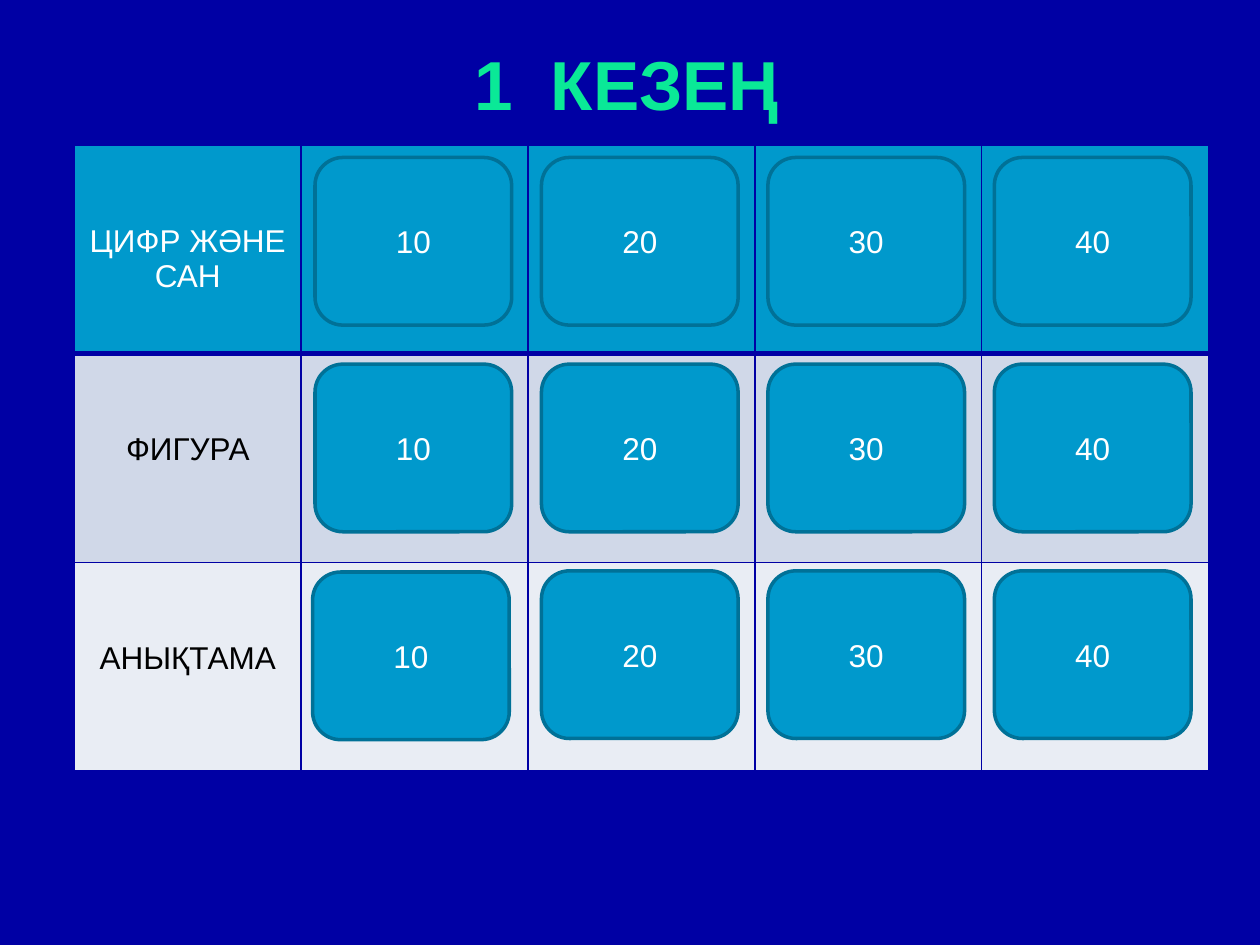
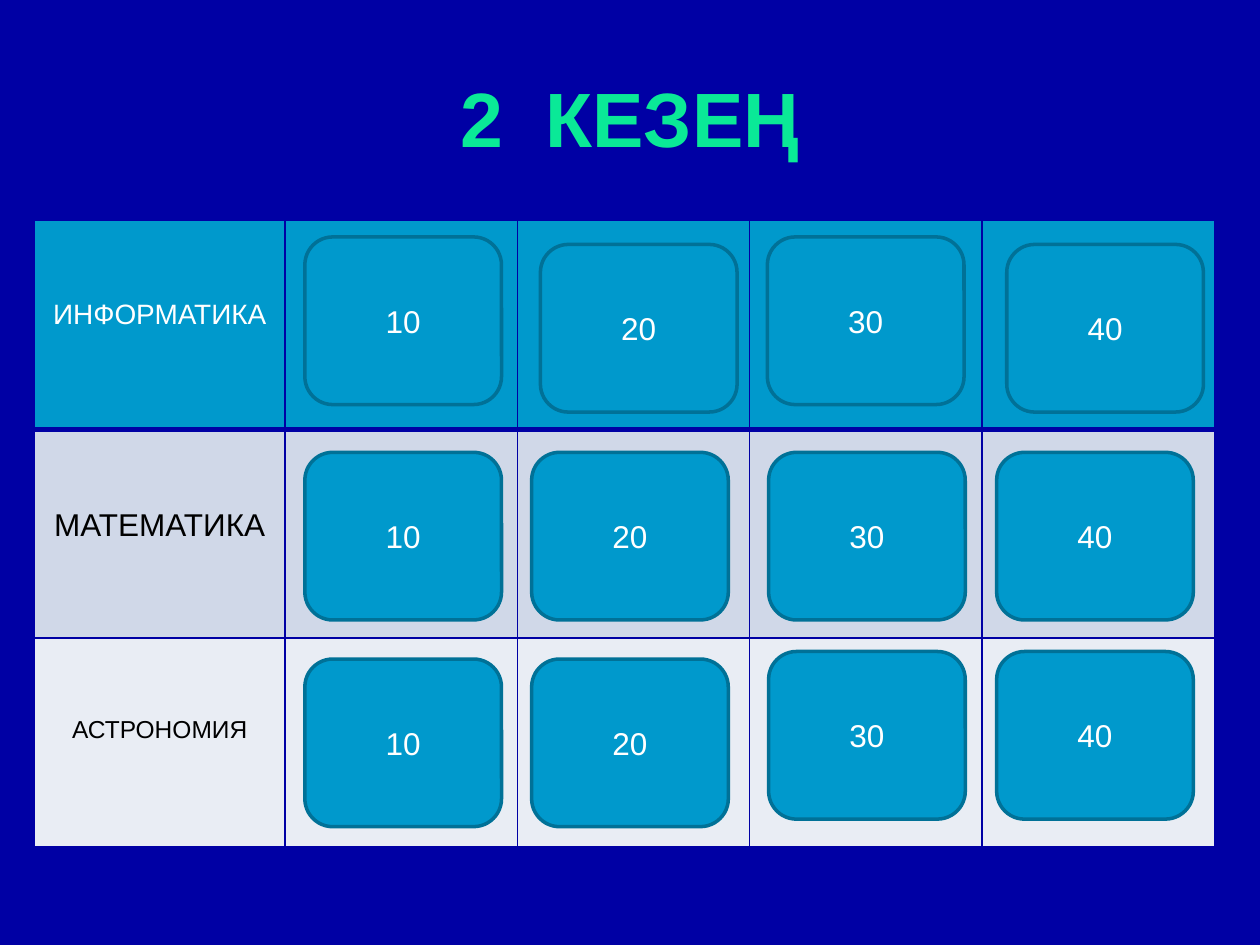
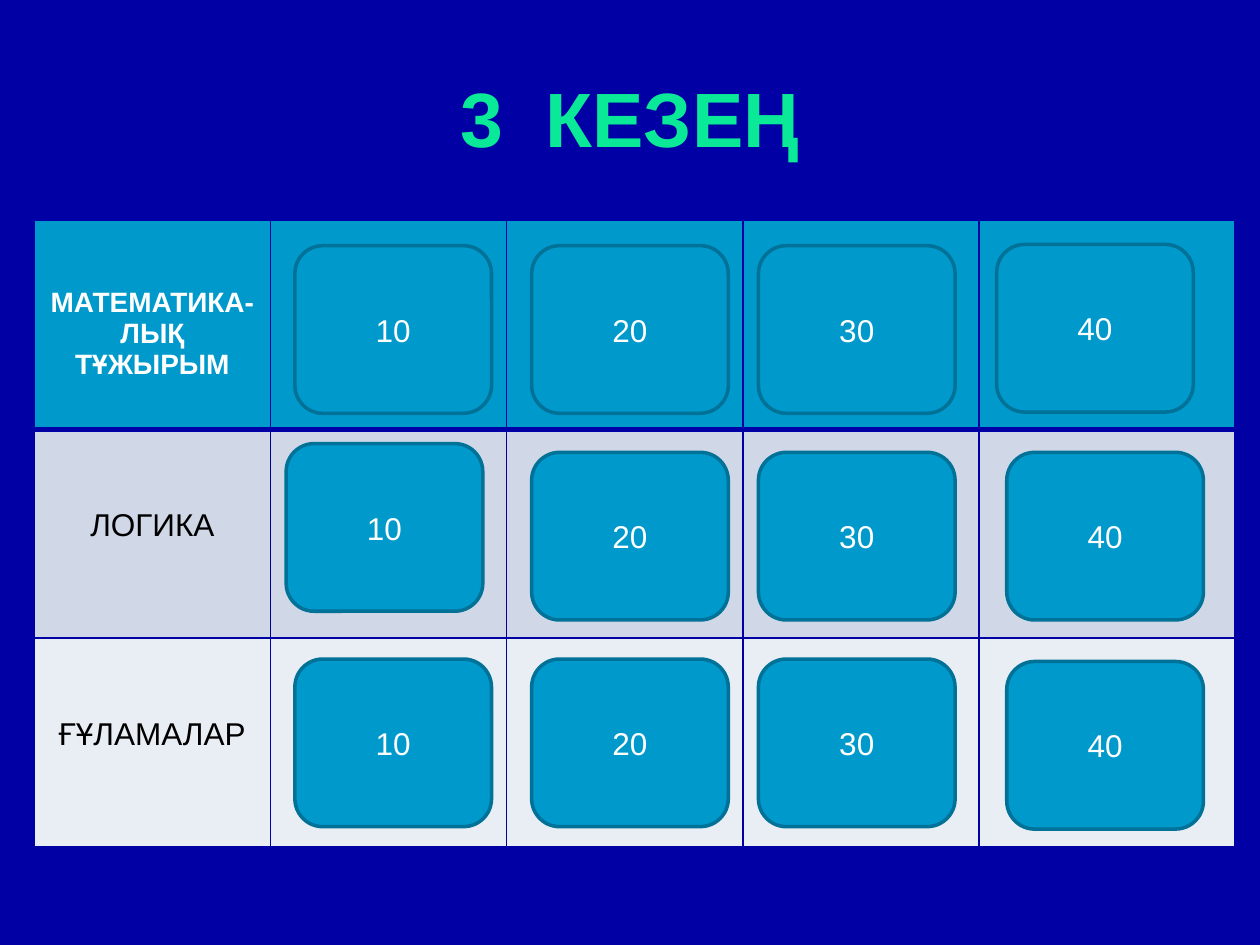
import pptx
import pptx.util
import pptx.dml.color
import pptx.enum.shapes
import pptx.enum.text
import pptx.oxml
import pptx.oxml.ns

Pt = pptx.util.Pt
FONT = "Arial"
NAVY, BLUE, EDGE, MINT = "0000A4", "0099CC", "007197", "0AE997"
WHITE, BLACK = "FFFFFF", "000000"
ROW_FILLS = [BLUE, "D0D8E8", "E9EDF4"]
ROW_INKS = [WHITE, BLACK, BLACK]
POINTS = ["10", "20", "30", "40"]
ROW_H = 119.3
BUTTON_W, BUTTON_H = 112.4, 95.8

STAGES = [
    {
        "title": "1  КЕЗЕҢ", "title_size": 39.6, "title_box": (33.8, 22.3, 648.7, 50.4),
        "table_at": (42.5, 82.8), "cols": [129.6] * 5,
        "topics": [("ЦИФР ЖӘНЕ САН", 18, False, 45), ("ФИГУРА", 18, False, 45),
                   ("АНЫҚТАМА", 18, False, 45)],
        "button_xs": [180, 309.4, 438.8, 568.2], "button_ys": [90, 208.1, 326.2],
        "nudges": {(2, 0): (-1.4, 0.7)},
    },
    {
        "title": "2  КЕЗЕҢ", "title_size": 44, "title_box": (36, 21.6, 648, 90),
        "table_at": (19.6, 126), "cols": [143.4, 132.7, 132.7, 132.7, 133],
        "topics": [("ИНФОРМАТИКА", 16, False, 45), ("МАТЕМАТИКА", 18, False, 45),
                   ("АСТРОНОМИЯ", 14, False, 45)],
        "button_xs": [174.2, 303.8, 439.2, 569.5], "button_ys": [135.4, 258.5, 376.6],
        "nudges": {(0, 1): (5, 4.3), (0, 2): (-0.7, 0), (0, 3): (5.8, 4.3),
                   (2, 2): (0, -4.3), (2, 3): (0, -4.3)},
    },
    {
        "title": "3  КЕЗЕҢ", "title_size": 44, "title_box": (36, 21.6, 648, 90),
        "table_at": (19.6, 126), "cols": [135, 135, 135, 135, 146],
        "topics": [("МАТЕМАТИКА-ЛЫҚ ТҰЖЫРЫМ", 16, True, 38), ("ЛОГИКА", 18, False, 45),
                   ("ҒҰЛАМАЛАР", 18, False, 45)],
        "button_xs": [168.5, 303.8, 433.4, 575.3], "button_ys": [140.4, 258.5, 376.6],
        "nudges": {(0, 3): (-5.8, -0.7), (1, 0): (-5, -5), (2, 3): (0, 1.4)},
    },
]


def rgb(value):
    return pptx.dml.color.RGBColor.from_string(value)


def paint(fill, color):
    fill.solid()
    fill.fore_color.rgb = rgb(color)


def write(tf, text, size, color, bold=False):
    tf.word_wrap = True
    p = tf.paragraphs[0]
    p.alignment = pptx.enum.text.PP_ALIGN.CENTER
    r = p.add_run()
    r.text = text
    for name, value in {"name": FONT, "size": Pt(size), "bold": bold}.items():
        setattr(r.font, name, value)
    r.font.color.rgb = rgb(color)


def add_title(s, stage):
    tf = s.shapes.add_textbox(*map(Pt, stage["title_box"])).text_frame
    tf.vertical_anchor = pptx.enum.text.MSO_ANCHOR.MIDDLE
    write(tf, stage["title"], stage["title_size"], MINT, True)


def add_borders(cell, row):
    widths = {"L": 1, "R": 1, "T": 3 if row == 1 else 1, "B": 3 if row == 0 else 1}
    tcPr = cell._tc.get_or_add_tcPr()
    for side, width in widths.items():
        tcPr.append(pptx.oxml.parse_xml(
            f'<a:ln{side} {pptx.oxml.ns.nsdecls("a")} w="{Pt(width)}">'
            f'<a:solidFill><a:srgbClr val="{NAVY}"/></a:solidFill></a:ln{side}>'))


def add_board(s, stage):
    cols, topics = stage["cols"], stage["topics"]
    size = (sum(cols), ROW_H * len(topics))
    table = s.shapes.add_table(len(topics), len(cols),
                               *map(Pt, stage["table_at"] + size)).table
    for col, width in zip(table.columns, cols):
        col.width = Pt(width)
    for i, (text, text_size, bold, top) in enumerate(topics):
        table.rows[i].height = Pt(ROW_H)
        for cell in table.rows[i].cells:
            add_borders(cell, i)
            paint(cell.fill, ROW_FILLS[i])
        topic = table.cell(i, 0)
        topic.margin_top = Pt(top)
        write(topic.text_frame, text, text_size, ROW_INKS[i], bold)


def add_buttons(s, stage):
    for i, y in enumerate(stage["button_ys"]):
        for j, (x, text) in enumerate(zip(stage["button_xs"], POINTS)):
            dx, dy = stage["nudges"].get((i, j), (0, 0))
            sp = s.shapes.add_shape(pptx.enum.shapes.MSO_SHAPE.ROUNDED_RECTANGLE,
                                    Pt(x + dx), Pt(y + dy), Pt(BUTTON_W), Pt(BUTTON_H))
            sp.shadow.inherit = False
            paint(sp.fill, BLUE)
            paint(sp.line.fill, EDGE)
            sp.line.width = Pt(2)
            sp.text_frame.vertical_anchor = pptx.enum.text.MSO_ANCHOR.MIDDLE
            write(sp.text_frame, text, 18, WHITE)


def main():
    prs = pptx.Presentation()
    prs.slide_width, prs.slide_height = Pt(720), Pt(540)
    paint(prs.slide_master.background.fill, NAVY)
    for stage in STAGES:
        s = prs.slides.add_slide(prs.slide_layouts[6])
        add_title(s, stage)
        add_board(s, stage)
        add_buttons(s, stage)
    prs.save("out.pptx")


if __name__ == "__main__":
    main()
